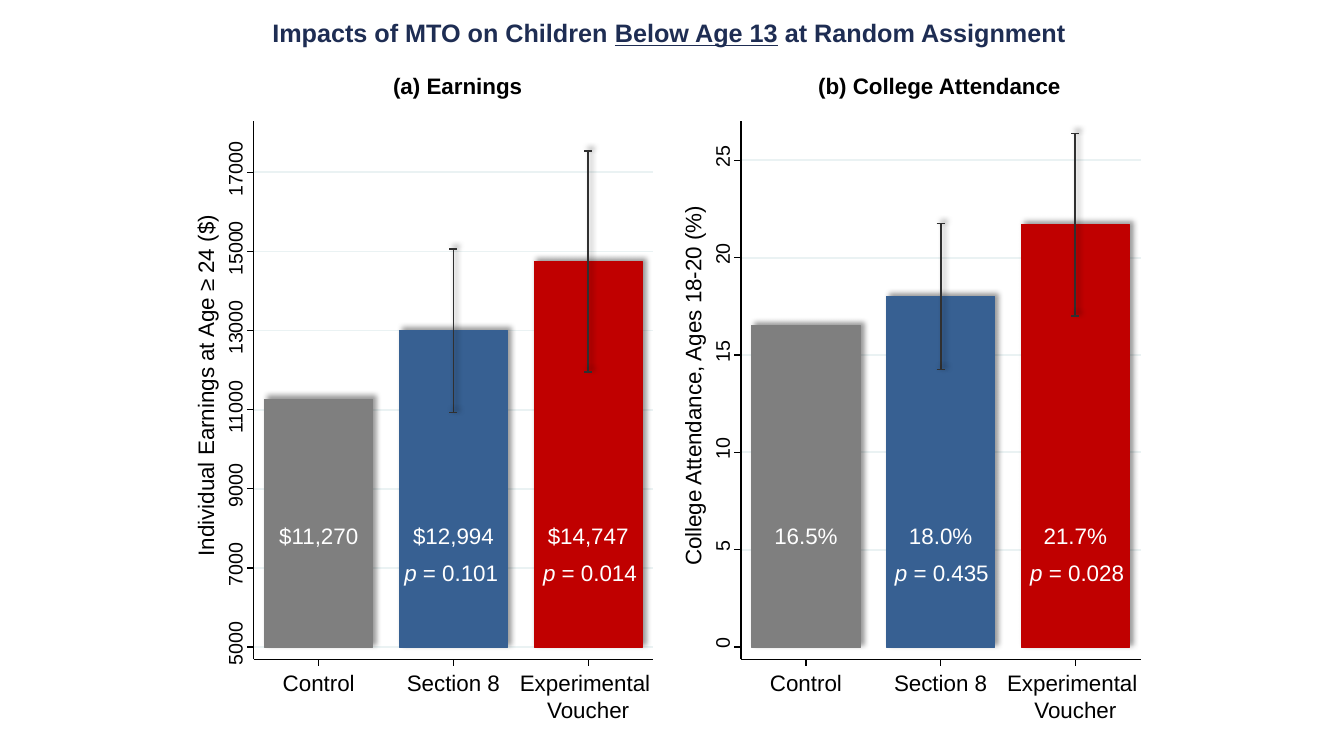
from lxml.etree import SubElement
from pptx import Presentation
from pptx.dml.color import RGBColor
from pptx.enum.shapes import MSO_CONNECTOR, MSO_SHAPE
from pptx.enum.text import MSO_AUTO_SIZE, PP_ALIGN
from pptx.oxml.ns import qn
from pptx.util import Inches, Pt

BLACK = RGBColor(0x00, 0x00, 0x00)
WHITE = RGBColor(0xFF, 0xFF, 0xFF)
NAVY = RGBColor(0x1E, 0x2D, 0x53)
GRID = RGBColor(0xEA, 0xF2, 0xF3)
CHARCOAL = RGBColor(0x30, 0x30, 0x30)
GRAY = RGBColor(0x7F, 0x7F, 0x7F)
BLUE = RGBColor(0x37, 0x60, 0x92)
RED = RGBColor(0xC0, 0x00, 0x00)

presentation = Presentation()
presentation.slide_width = Inches(13.33)
presentation.slide_height = Inches(7.5)
slide = presentation.slides.add_slide(presentation.slide_layouts[6])

# The slide is a grid of 100 columns and 75 rows
COLUMN = presentation.slide_width / 100
ROW = presentation.slide_height / 75

# Shared chart layout, in columns and rows
PANEL_WIDTH = 29.74
AXIS_TOP, BASE_ROW, AXIS_ROW = 12, 64.2, 65.4
FIRST_CENTER, BAR_PITCH, BAR_WIDTH = 4.84, 10.02, 8.05
TICK_COLUMNS, TICK_ROWS, CAP = 0.53, 0.7, 0.3
DIGIT_WIDTH = 0.84

# Category: label lines, label width, bar color
categories = [
    (["Control"], 5.4, GRAY),
    (["Section 8"], 7, BLUE),
    (["Experimental ", "Voucher"], 10.28, RED),
]

# Each bar: value, half of the error bar, value label, p-value, shift of the p-value
panels = [
    dict(left=18.88, title="(a) Earnings", title_center=34.05, title_width=11.25,
         axis_title="Individual Earnings at Age ≥ 24 ($)", axis_title_width=25.73,
         ticks=range(5000, 17001, 2000), first_grid=0, tick_rows=7.85,
         bars=[(11270, 0, "$11,270", None, 0),
               (12994, 2065, "$12,994", "0.101", 0.15),
               (14747, 2790, "$14,747", "0.014", 0.45)]),
    dict(left=55.13, title="(b) College Attendance", title_center=69.9, title_width=19.8,
         axis_title="College Attendance, Ages 18-20 (%)", axis_title_width=27.15,
         ticks=range(0, 26, 5), first_grid=1, tick_rows=9.66,
         bars=[(16.5, 0, "16.5%", None, 0),
               (18.0, 3.75, "18.0%", "0.435", 0.4),
               (21.7, 4.68, "21.7%", "0.028", 0.45)]),
]


def add_text(paragraphs, center, top, width, height, size=16, color=BLACK,
             align=PP_ALIGN.CENTER, wrap=False, inset=True, rotation=0):
    """Each paragraph is a list of (text, font settings) runs."""
    box = slide.shapes.add_textbox(round((center - width / 2) * COLUMN), round(top * ROW),
                                   round(width * COLUMN), round(height * ROW))
    box.rotation = rotation
    frame = box.text_frame
    frame.word_wrap = wrap
    frame.auto_size = MSO_AUTO_SIZE.SHAPE_TO_FIT_TEXT
    if not inset:
        for side in ("left", "top", "right", "bottom"):
            setattr(frame, f"margin_{side}", 0)
    for index, runs in enumerate(paragraphs):
        paragraph = frame.add_paragraph() if index else frame.paragraphs[0]
        paragraph.alignment = align
        for text, extra in runs:
            run = paragraph.add_run()
            run.text = text
            run.font.color.rgb = color
            settings = {"name": "Arial", "size": Pt(size), **extra}
            for name, value in settings.items():
                setattr(run.font, name, value)


def add_line(start, end, color=BLACK, width=0.88):
    points = [round(length) for column, row in (start, end)
              for length in (column * COLUMN, row * ROW)]
    line = slide.shapes.add_connector(MSO_CONNECTOR.STRAIGHT, *points)
    line.line.color.rgb = color
    line.line.width = Pt(width)
    SubElement(line._element.spPr, qn("a:effectLst"))
    return line


# Slide title
bold = {"bold": True}
add_text([[("Impacts of MTO on Children ", bold),
           ("Below Age 13", {"bold": True, "underline": True}),
           (" at Random Assignment", bold)]],
         49.77, 1.25, 75, 4, size=18, color=NAVY, wrap=True)

shadowed = []
for panel in panels:
    left = panel["left"]
    right = left + PANEL_WIDTH
    ticks = panel["ticks"]
    tick_marks = [(tick, BASE_ROW - index * panel["tick_rows"])
                  for index, tick in enumerate(ticks)]
    rows_per_unit = panel["tick_rows"] / ticks.step
    centers = [left + FIRST_CENTER + index * BAR_PITCH for index in range(len(categories))]
    add_text([[(panel["title"], bold)]], panel["title_center"], 6.7, panel["title_width"], 3.7)

    # Grid lines
    for tick, row in tick_marks[panel["first_grid"]:]:
        add_line((left, row), (right, row), GRID, 1.25)

    # Bars
    for center, category, bar in zip(centers, categories, panel["bars"]):
        height = (bar[0] - ticks.start) * rows_per_unit
        shape = slide.shapes.add_shape(
            MSO_SHAPE.RECTANGLE, round((center - BAR_WIDTH / 2) * COLUMN),
            round((BASE_ROW - height) * ROW), round(BAR_WIDTH * COLUMN), round(height * ROW))
        shape.fill.solid()
        shape.fill.fore_color.rgb = category[2]
        shape.line.color.rgb = category[2]
        shape.line.width = 0
        shape.shadow.inherit = False
        shadowed.append(shape)

    # Error bars
    for center, (value, margin, *labels) in zip(centers, panel["bars"]):
        if margin:
            low, high = [BASE_ROW - (value + change - ticks.start) * rows_per_unit
                         for change in (-margin, margin)]
            shadowed.append(add_line((center, low), (center, high), CHARCOAL, 1.25))
            for row in (high, low):
                shadowed.append(add_line((center - CAP, row), (center + CAP, row), CHARCOAL, 1.25))

    # Value axis
    add_line((left, AXIS_ROW), (left, AXIS_TOP))
    for tick, row in tick_marks:
        add_line((left, row), (left - TICK_COLUMNS, row))
        add_text([[(str(tick), {})]], left - 1.38, row - 1.6, DIGIT_WIDTH * len(str(tick)), 2.4,
                 size=14, align=PP_ALIGN.LEFT, inset=False, rotation=270)
    add_text([[(panel["axis_title"], {})]], left - 3.6, 36.7, panel["axis_title_width"], 2.7,
             align=PP_ALIGN.LEFT, inset=False, rotation=270)

    # Category axis and labels
    add_line((left, AXIS_ROW), (right, AXIS_ROW))
    for center, category, bar in zip(centers, categories, panel["bars"]):
        lines, label_width, color = category
        value, margin, value_label, p_value, shift = bar
        add_line((center, AXIS_ROW), (center, AXIS_ROW + TICK_ROWS))
        add_text([[(text, {})] for text in lines], center, 66.4, label_width,
                 2.7 * len(lines), inset=False)
        add_text([[(value_label, {})]], center, 51.3, BAR_WIDTH, 3.7, color=WHITE, wrap=True)
        if p_value:
            add_text([[("p", {"italic": True}), (f" = {p_value}", {})]], center + shift, 55,
                     9.08, 3.7, color=WHITE, align=PP_ALIGN.LEFT, wrap=True)

# Soft shadow toward the upper right
for shape in shadowed:
    effects = shape._element.spPr.find(qn("a:effectLst"))
    shadow = SubElement(effects, qn("a:outerShdw"), blurRad=str(Pt(4)), dist=str(Pt(3)),
                        dir=str(315 * 60000), algn="bl", rotWithShape="0")
    shadow_color = SubElement(shadow, qn("a:srgbClr"), val=str(BLACK))
    SubElement(shadow_color, qn("a:alpha"), val="40000")

presentation.save("out.pptx")
